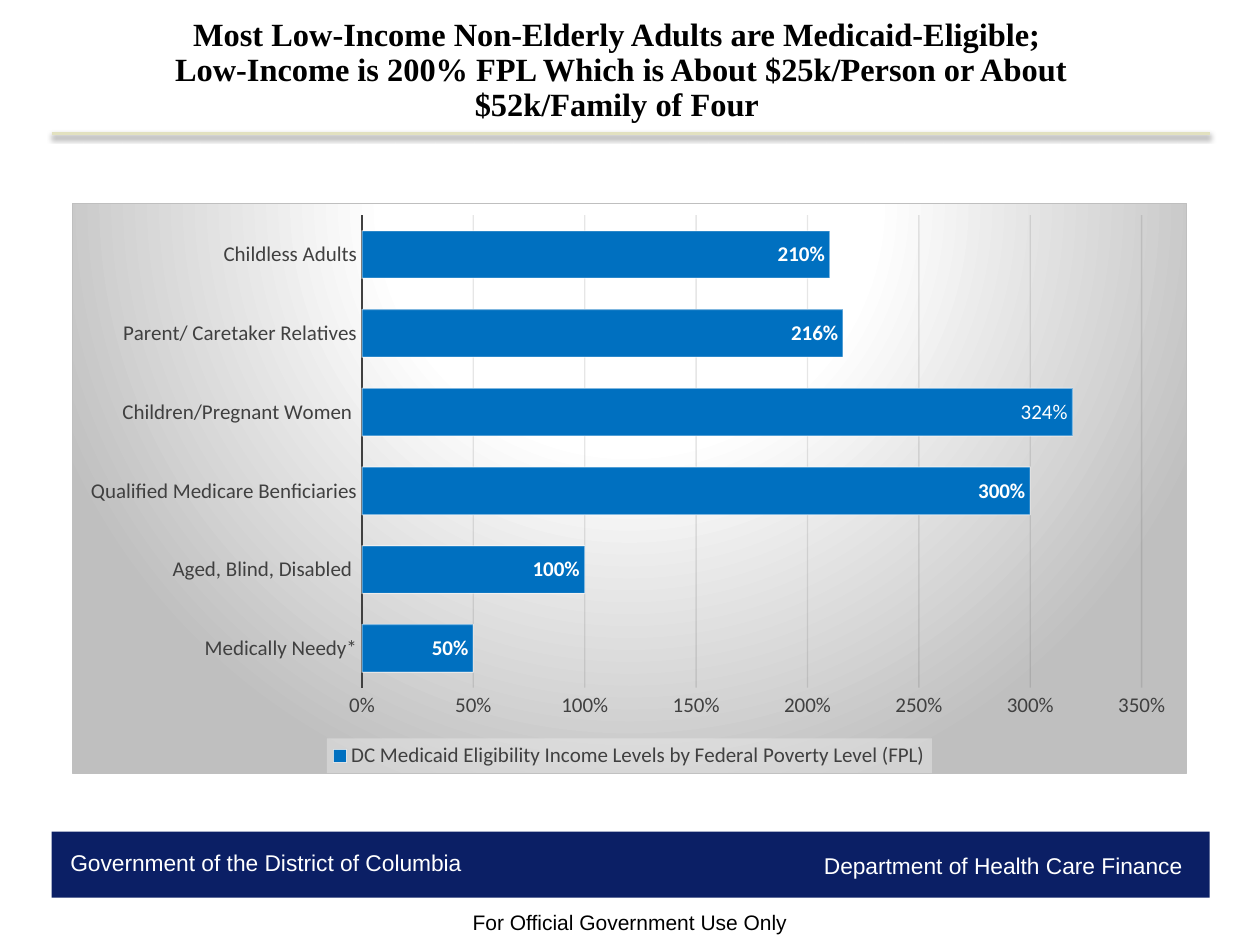
from dataclasses import dataclass

from lxml import etree
from pptx import Presentation, util as u
from pptx.chart.data import CategoryChartData
from pptx.dml.color import RGBColor
from pptx.enum import chart as charts, shapes, text
from pptx.oxml import parse_xml
from pptx.oxml.ns import nsdecls, qn

WIDTH, HEIGHT = 10, 7.5


@dataclass(frozen=True)
class Theme:
    black: str = "000000"
    white: str = "FFFFFF"
    navy: str = "0B1F65"
    rule: str = "E2E1C0"
    bar: str = "0070C0"
    label: str = "404040"
    grid: str = "0D0D0D"
    legend: str = "F2F2F2"
    edge: str = "BFBFBF"
    title_size: float = 18.5
    banner_size: float = 13
    small_size: float = 12
    body_font: str = "Arial"
    title_font: str = "Times New Roman"
    chart_font: str = "Calibri"


@dataclass(frozen=True)
class Area:
    """A rectangle in shares of the slide's width and height."""
    left: float
    top: float
    width: float
    height: float

    def lengths(self):
        return (u.Inches(self.left * WIDTH), u.Inches(self.top * HEIGHT),
                u.Inches(self.width * WIDTH), u.Inches(self.height * HEIGHT))


@dataclass(frozen=True)
class Caption:
    words: str
    area: Area
    color: str
    size: float
    align: text.PP_ALIGN = text.PP_ALIGN.LEFT


@dataclass(frozen=True)
class Level:
    group: str
    share: float


THEME = Theme()
TITLE = ("Most Low-Income Non-Elderly Adults are Medicaid-Eligible; ",
         "Low-Income is 200% FPL Which is About $25k/Person or About $52k/Family of Four ")
TITLE_AREA = Area(0.121, 0, 0.743, 0.15)
CHART_AREA = Area(0.057, 0.215, 0.885, 0.604)
BANNER_AREA = Area(0.041, 0.88, 0.919, 0.07)
RULE_TOP = 1.06
CAPTIONS = (
    Caption("For Official Government Use Only", Area(0, 0.956, 1, 0.04),
            THEME.black, THEME.small_size, text.PP_ALIGN.CENTER),
    Caption("Government of the District of Columbia", Area(0.046, 0.892, 0.356, 0.043),
            THEME.white, THEME.banner_size),
    Caption("Department of Health Care Finance", Area(0.644, 0.895, 0.311, 0.043),
            THEME.white, THEME.banner_size),
)
SERIES_NAME = "DC Medicaid Eligibility Income Levels by Federal Poverty Level (FPL)"
LEVELS = (
    Level("Medically Needy*", 0.5),
    Level("Aged, Blind, Disabled ", 1),
    Level("Qualified Medicare Benficiaries", 3),
    Level("Children/Pregnant Women ", 3.19),
    Level("Parent/ Caretaker Relatives", 2.16),
    Level("Childless Adults", 2.1),
)
OWN_LABELS = {3: "324%"}
PLOT_LAYOUT = {"x": 0.26, "y": 0.02, "w": 0.7, "h": 0.83}


def rgb(color: str) -> RGBColor:
    return RGBColor.from_string(color)


def style_font(font, size: float, color: str, name: str, bold: bool = False) -> None:
    font.size, font.name, font.bold = u.Pt(size), name, bold
    font.color.rgb = rgb(color)


def style_line(line, color: str, width: float, opacity: int = 100) -> None:
    line.color.rgb = rgb(color)
    line.width = u.Pt(width)
    if opacity < 100:
        tint = line._get_or_add_ln().find(".//" + qn("a:srgbClr"))
        etree.SubElement(tint, qn("a:alpha"), val=str(opacity * 1000))


def write(para, words: str, *, size: float, color: str, name: str,
          bold: bool = False, align=text.PP_ALIGN.LEFT) -> None:
    span = para.add_run()
    span.text = words
    para.alignment = align
    style_font(span.font, size, color, name, bold)


def add_caption(page, caption: Caption) -> None:
    box = page.shapes.add_textbox(*caption.area.lengths())
    box.text_frame.word_wrap = True
    write(box.text_frame.paragraphs[0], caption.words, size=caption.size,
          color=caption.color, name=THEME.body_font, align=caption.align)


def add_title(page) -> None:
    title = page.shapes.title
    title.left, title.top, title.width, title.height = TITLE_AREA.lengths()
    frame = title.text_frame
    frame.auto_size = text.MSO_AUTO_SIZE.NONE
    frame.vertical_anchor = text.MSO_ANCHOR.MIDDLE
    para = frame.paragraphs[0]
    para.line_spacing = 0.9
    for row, words in enumerate(TITLE):
        if row:
            para.add_line_break()
        write(para, words, size=THEME.title_size, color=THEME.black,
              name=THEME.title_font, bold=True, align=text.PP_ALIGN.CENTER)


def add_rule(page) -> None:
    left, _, width, _ = BANNER_AREA.lengths()
    top = u.Inches(RULE_TOP)
    rule = page.shapes.add_connector(shapes.MSO_CONNECTOR.STRAIGHT, left, top, left + width, top)
    style_line(rule.line, THEME.rule, 1.5)
    rule._element.spPr.append(parse_xml(
        f'<a:effectLst {nsdecls("a")}><a:outerShdw blurRad="{u.Pt(3.1)}" dist="{u.Pt(1.6)}" '
        f'dir="5400000" rotWithShape="0"><a:srgbClr val="{THEME.black}"><a:alpha val="38000"/>'
        '</a:srgbClr></a:outerShdw></a:effectLst>'))


def add_banner(page) -> None:
    banner = page.shapes.add_shape(shapes.MSO_SHAPE.RECTANGLE, *BANNER_AREA.lengths())
    banner.shadow.inherit = False
    banner.fill.solid()
    banner.fill.fore_color.rgb = rgb(THEME.navy)
    banner.line.fill.background()


def add_backgrounds(chart) -> None:
    """Give the chart a radial gradient and its legend a translucent panel."""
    stops = "".join(f'<a:gs pos="{place * 1000}"><a:srgbClr val="{color}"/></a:gs>'
                    for place, color in ((0, THEME.white), (39, THEME.white), (100, THEME.edge)))
    chart._chartSpace.find(qn("c:chart")).addnext(parse_xml(
        f'<c:spPr {nsdecls("c", "a")}><a:gradFill><a:gsLst>{stops}</a:gsLst><a:path path="circle">'
        '<a:fillToRect l="50000" t="-80000" r="50000" b="180000"/></a:path></a:gradFill>'
        f'<a:ln w="{u.Pt(0.75)}"><a:solidFill><a:srgbClr val="{THEME.edge}"/></a:solidFill></a:ln>'
        '</c:spPr>'))
    chart.legend._element.find(qn("c:overlay")).addnext(parse_xml(
        f'<c:spPr {nsdecls("c", "a")}><a:solidFill><a:srgbClr val="{THEME.legend}">'
        '<a:alpha val="39000"/></a:srgbClr></a:solidFill></c:spPr>'))


def place_plot(chart) -> None:
    plot_area = chart._chartSpace.find(".//" + qn("c:plotArea"))
    for old in plot_area.findall(qn("c:layout")):
        plot_area.remove(old)
    shares = "".join(f'<c:{side} val="{share}"/>' for side, share in PLOT_LAYOUT.items())
    plot_area.insert(0, parse_xml(
        f'<c:layout {nsdecls("c")}><c:manualLayout><c:layoutTarget val="inner"/>'
        f'<c:xMode val="edge"/><c:yMode val="edge"/>{shares}</c:manualLayout></c:layout>'))


def style_axes(chart) -> None:
    groups, levels = chart.category_axis, chart.value_axis
    for axis in (groups, levels):
        axis.major_tick_mark = axis.minor_tick_mark = charts.XL_TICK_MARK.NONE
        style_font(axis.tick_labels.font, THEME.small_size, THEME.label, THEME.chart_font)
    style_line(groups.format.line, THEME.label, 1.5)
    levels.format.line.fill.background()
    levels.minimum_scale, levels.maximum_scale, levels.major_unit = 0, 3.5, 0.5
    levels.tick_labels.number_format = "0%"
    levels.tick_labels.number_format_is_linked = False
    style_line(levels.major_gridlines.format.line, THEME.grid, 0.75, opacity=10)


def style_bars(plot) -> None:
    plot.gap_width, plot.vary_by_categories = 65, False
    bars = plot.series[0]
    bars.format.fill.solid()
    bars.format.fill.fore_color.rgb = rgb(THEME.bar)
    style_line(bars.format.line, THEME.white, 0.75, opacity=50)
    labels = bars.data_labels
    labels.show_value = True
    labels.number_format, labels.number_format_is_linked = "0%", False
    labels.position = charts.XL_LABEL_POSITION.INSIDE_END
    style_font(labels.font, THEME.small_size, THEME.white, THEME.chart_font, bold=True)
    for index, words in OWN_LABELS.items():
        label = bars.points[index].data_label
        write(label.text_frame.paragraphs[0], words, size=THEME.small_size,
              color=THEME.white, name=THEME.chart_font, align=text.PP_ALIGN.CENTER)
        label.position = charts.XL_LABEL_POSITION.INSIDE_END


def add_levels_chart(page) -> None:
    data = CategoryChartData(number_format="0%")
    data.categories = [level.group for level in LEVELS]
    data.add_series(SERIES_NAME, [level.share for level in LEVELS])
    chart = page.shapes.add_chart(charts.XL_CHART_TYPE.BAR_CLUSTERED,
                                  *CHART_AREA.lengths(), data).chart
    style_font(chart.font, 10, THEME.black, THEME.chart_font)
    chart.has_title, chart.has_legend = False, True
    chart.legend.position = charts.XL_LEGEND_POSITION.BOTTOM
    chart.legend.include_in_layout = False
    style_font(chart.legend.font, THEME.small_size, THEME.label, THEME.chart_font)
    style_axes(chart)
    style_bars(chart.plots[0])
    add_backgrounds(chart)
    place_plot(chart)


def main() -> None:
    deck = Presentation()
    deck.slide_width, deck.slide_height = u.Inches(WIDTH), u.Inches(HEIGHT)
    page = deck.slides.add_slide(deck.slide_layouts.get_by_name("Title Only"))
    add_rule(page)
    add_banner(page)
    for caption in CAPTIONS:
        add_caption(page, caption)
    add_title(page)
    add_levels_chart(page)
    deck.save("out.pptx")


if __name__ == "__main__":
    main()
